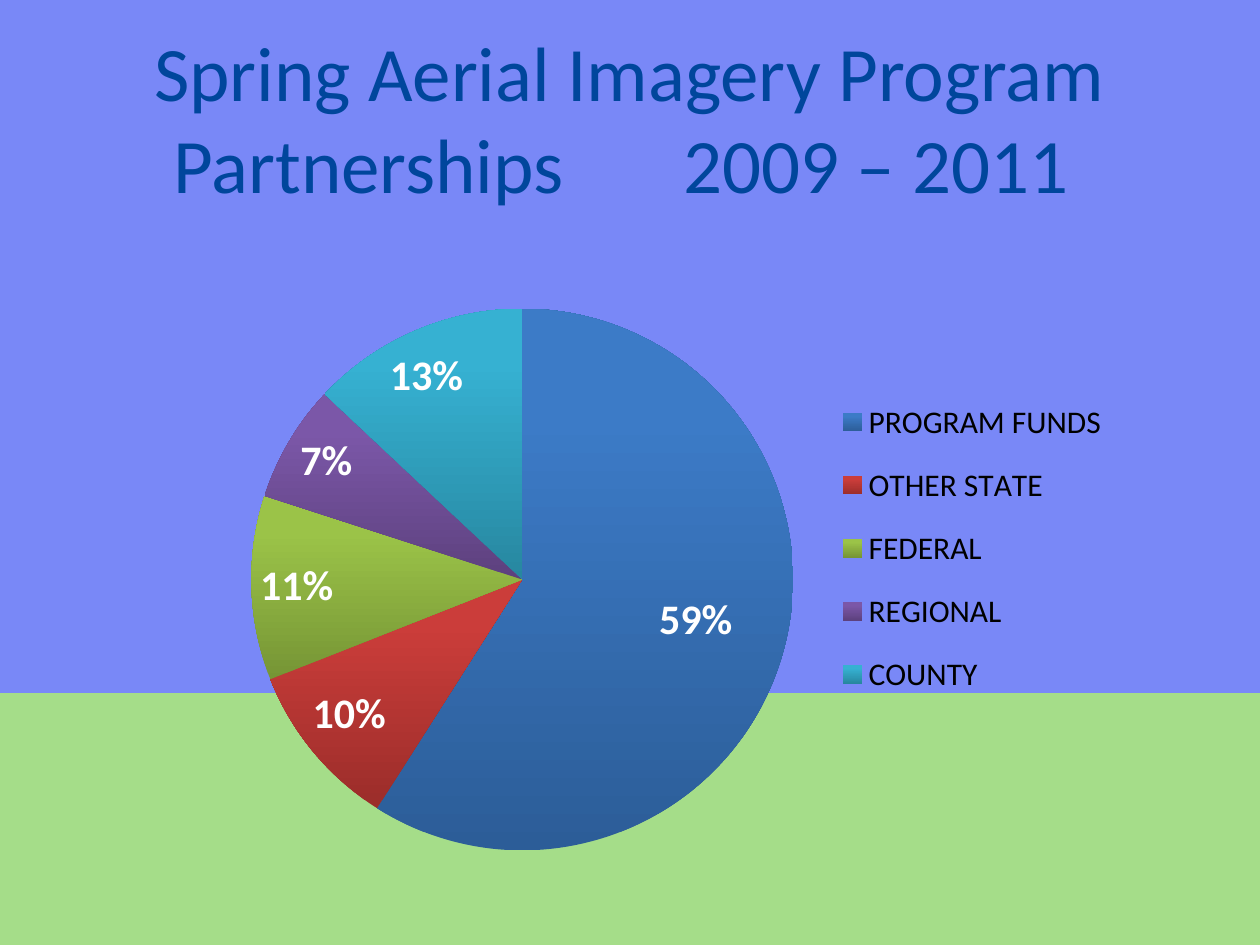
from lxml import etree
from pptx import Presentation
from pptx.chart.data import CategoryChartData
from pptx.dml.color import RGBColor
from pptx.enum import chart as ch, shapes, text
from pptx.oxml import parse_xml
from pptx.oxml.ns import nsdecls, qn
from pptx.util import Inches, Pt

THEME = {
    "font": "Calibri", "sky": "7988F7", "grass": "A5DD89",
    "title": "00469C", "label": "FFFFFF", "legend": "000000",
    "title_pt": 44, "label_pt": 24, "legend_pt": 18,
}
# name, share, dark bottom colour, light top colour
FUNDS = [
    ("PROGRAM FUNDS", 59, "2C5D98", "3C7BC7"),
    ("OTHER STATE", 10, "9B2D2A", "CB3D3A"),
    ("FEDERAL", 11, "769535", "9BC348"),
    ("REGIONAL", 7, "5D417E", "7B57A8"),
    ("COUNTY", 13, "2787A0", "36B1D2"),
]


def style(font, role, bold=False):
    font.name = THEME["font"]
    font.size = Pt(THEME[role + "_pt"])
    font.color.rgb = RGBColor.from_string(THEME[role])
    font.bold = bold


def layout(x, y, w=None, h=None, inner=False):
    """Make a manual chart layout from fractions of the chart."""
    node = parse_xml(f"<c:layout {nsdecls('c')}><c:manualLayout/></c:layout>")
    items = []
    if inner:
        items.append(("layoutTarget", "inner"))
    if w:
        items += [("xMode", "edge"), ("yMode", "edge")]
    items += [("x", x), ("y", y)]
    if w:
        items += [("w", w), ("h", h)]
    for tag, val in items:
        etree.SubElement(node[0], qn("c:" + tag)).set("val", str(val))
    return node


prs = Presentation()
prs.slide_width, prs.slide_height = Inches(10), Inches(7.5)
slide = prs.slides.add_slide(prs.slide_layouts[5])

# Backdrop, behind the title
tree = slide.shapes._spTree
for spot, (role, top, high) in enumerate([("grass", 3.67, 3.83), ("sky", 0, 5.5)]):
    band = slide.shapes.add_shape(
        shapes.MSO_SHAPE.RECTANGLE, 0, Inches(top), Inches(10), Inches(high))
    band.shadow.inherit = False
    band.fill.solid()
    band.fill.fore_color.rgb = RGBColor.from_string(THEME[role])
    band.line.fill.background()
    tree.insert(2 + spot, band._element)

# Title, with one widened space before the years
title = slide.shapes.title
title.left, title.top = Inches(0.5), Inches(0.3)
title.width, title.height = Inches(9), Inches(1.25)
frame = title.text_frame
frame.word_wrap = True
frame.auto_size = text.MSO_AUTO_SIZE.NONE
frame.vertical_anchor = text.MSO_ANCHOR.MIDDLE
para = frame.paragraphs[0]
para.alignment = text.PP_ALIGN.CENTER
for words in ("Spring Aerial Imagery Program Partnerships", " ", "2009 – 2011 "):
    run = para.add_run()
    run.text = words
    if words == " ":
        run._r.get_or_add_rPr().set("spc", "5800")
style(para.font, "title")

# Pie chart
data = CategoryChartData()
data.categories = [fund[0] for fund in FUNDS]
data.add_series("Series 1", [fund[1] for fund in FUNDS])
chart = slide.shapes.add_chart(
    ch.XL_CHART_TYPE.PIE, Inches(1), Inches(1.95), Inches(8.5), Inches(5), data).chart
chart.has_title = False
style(chart.font, "legend")
chart.has_legend = True
legend = chart.legend
legend.position = ch.XL_LEGEND_POSITION.RIGHT
legend.include_in_layout = False
style(legend.font, "legend")
legend._element.find(qn("c:legendPos")).addnext(layout(0.63, 0.21, 0.32, 0.54))

area = chart._chartSpace.chart.plotArea
for old in area.findall(qn("c:layout")):
    area.remove(old)
area.insert(0, layout(0.11, 0.1, 0.52, 0.86, inner=True))

plot = chart.plots[0]
plot.vary_by_categories = True
pie = plot.series[0]
for spot, (name, share, dark, light) in enumerate(FUNDS):
    fill = pie.points[spot].format.fill
    fill.gradient()
    fill.gradient_angle = 90
    for stop, color, place in zip(fill.gradient_stops, (dark, light), (0, 0.8)):
        stop.color.rgb = RGBColor.from_string(color)
        stop.position = place

labels = pie.data_labels
labels.show_percentage = True
labels.show_value = False
labels.number_format = "0%"
labels.number_format_is_linked = False
labels.position = ch.XL_LABEL_POSITION.BEST_FIT
style(labels.font, "label", bold=True)

# The largest slice has its label nearer the centre
main = pie.points[0].data_label
style(main.font, "label", bold=True)
main.position = ch.XL_LABEL_POSITION.INSIDE_END
mark = labels._element.find(qn("c:dLbl"))
mark.find(qn("c:idx")).addnext(layout(-0.04, -0.01))
mark.find(qn("c:showVal")).set("val", "0")
mark.find(qn("c:showPercent")).set("val", "1")

prs.save("out.pptx")
